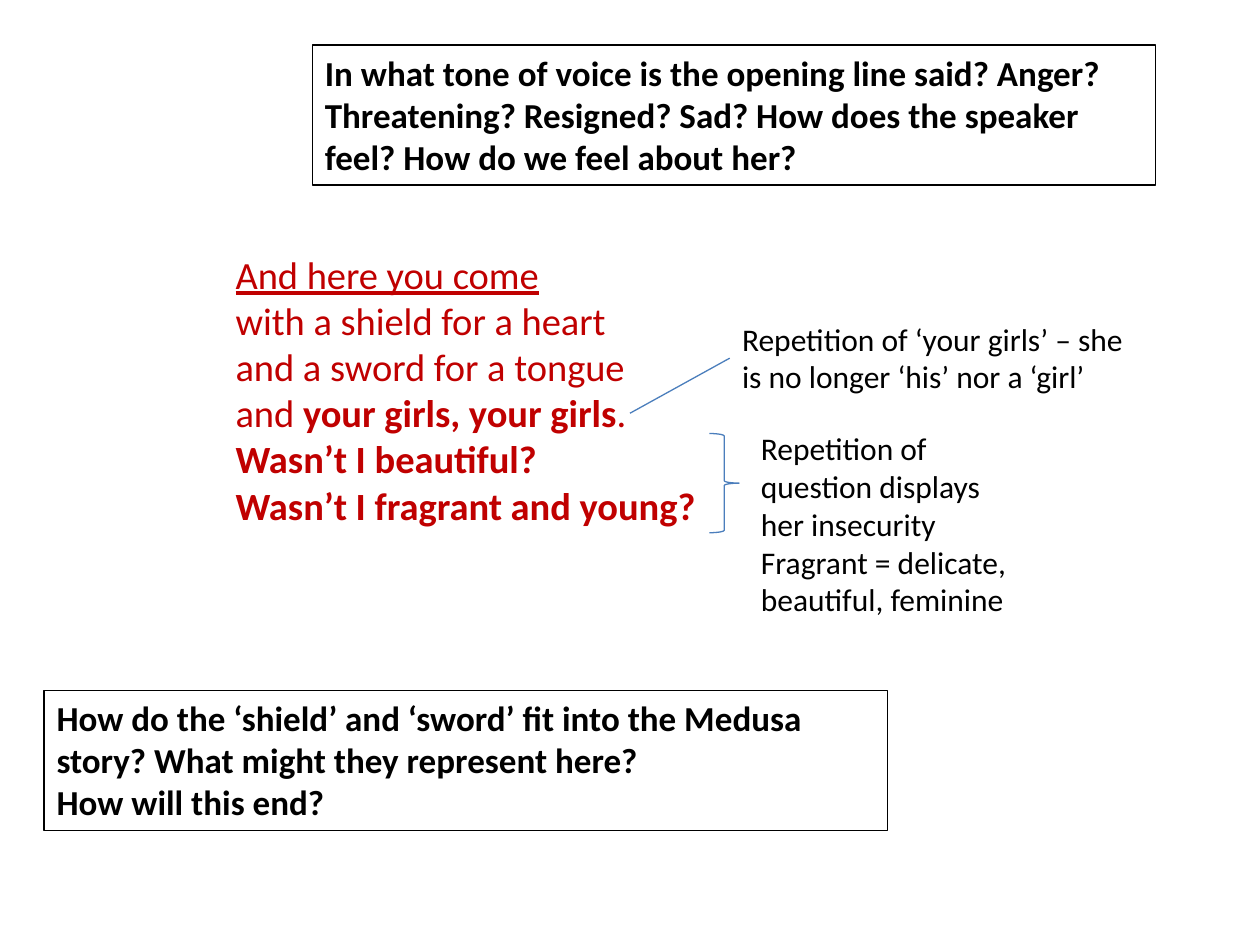
from dataclasses import dataclass

from lxml import etree
from pptx import Presentation
from pptx.dml.color import RGBColor
from pptx.enum.shapes import MSO_CONNECTOR, MSO_SHAPE
from pptx.enum.text import MSO_ANCHOR, MSO_AUTO_SIZE, PP_ALIGN
from pptx.oxml.ns import qn
from pptx.util import Cm, Pt

STRAIGHT = MSO_CONNECTOR.STRAIGHT
RIGHT_BRACE = MSO_SHAPE.RIGHT_BRACE
TOP = MSO_ANCHOR.TOP
LEFT = PP_ALIGN.LEFT
GROW = MSO_AUTO_SIZE.SHAPE_TO_FIT_TEXT
LEFT_SIDE = 1


@dataclass(frozen=True)
class Theme:
    """Colours, font, type sizes and line width."""

    font: str = "Calibri"
    ink: RGBColor = RGBColor(0x00, 0x00, 0x00)
    verse: RGBColor = RGBColor(0xC0, 0x00, 0x00)
    marker: RGBColor = RGBColor(0x4B, 0x7E, 0xBC)
    verse_size: int = 22
    question_size: int = 20
    note_size: int = 18
    line_width: float = 0.75


@dataclass(frozen=True)
class Line:
    """One line of text: plain lead, bold middle and plain tail."""

    lead: str = ""
    strong: str = ""
    tail: str = ""
    underline: bool = False


class SlideBuilder:
    """Draws the elements of an annotated poem on one slide."""

    def __init__(self, slide, theme):
        self.slide = slide
        self.theme = theme

    def text(self, left, top, width, height, lines, size, color):
        """Add a text box that holds one paragraph per line."""
        box = self.slide.shapes.add_textbox(Cm(left), Cm(top), Cm(width), Cm(height))
        frame = box.text_frame
        frame.word_wrap = True
        frame.auto_size = GROW
        frame.vertical_anchor = TOP
        for index, line in enumerate(lines):
            paragraph = frame.paragraphs[0] if index == 0 else frame.add_paragraph()
            paragraph.alignment = LEFT
            font = paragraph.font
            font.name = self.theme.font
            font.size = Pt(size)
            font.color.rgb = color
            font.underline = line.underline
            font.bold = not (line.lead or line.tail)
            for content, bold in ((line.lead, False), (line.strong, True), (line.tail, False)):
                if content:
                    run = paragraph.add_run()
                    run.text = content
                    if bold != font.bold:
                        run.font.bold = bold
        return box

    def poem(self, left, top, width, height, lines):
        """Add the stanza."""
        return self.text(left, top, width, height, lines, self.theme.verse_size, self.theme.verse)

    def note(self, left, top, width, height, *sentences):
        """Add a plain annotation."""
        lines = [Line(sentence) for sentence in sentences]
        return self.text(left, top, width, height, lines, self.theme.note_size, self.theme.ink)

    def question(self, left, top, *sentences):
        """Add a framed discussion question."""
        lines = [Line(strong=sentence) for sentence in sentences]
        box = self.text(left, top, 17, 2.82, lines, self.theme.question_size, self.theme.ink)
        self.outline(box.line, self.theme.ink)
        return box

    def brace(self, left, top, width, height):
        """Add a closing brace beside the lines it gathers."""
        shape = self.slide.shapes.add_shape(RIGHT_BRACE, Cm(left), Cm(top), Cm(width), Cm(height))
        shape.shadow.inherit = False
        shape.fill.background()
        self.outline(shape.line, self.theme.marker)

    def pointer(self, left, top, note):
        """Add a line from a point to the left side of a note."""
        middle = note.top + note.height // 2
        connector = self.slide.shapes.add_connector(STRAIGHT, Cm(left), Cm(top), note.left, middle)
        connector.end_connect(note, LEFT_SIDE)
        self.outline(connector.line, self.theme.marker)
        etree.SubElement(connector._element.spPr, qn("a:effectLst"))

    def outline(self, line, color):
        """Give a line its colour and width."""
        line.color.rgb = color
        line.width = Pt(self.theme.line_width)


def main():
    """Build the slide and save it."""
    presentation = Presentation()
    presentation.slide_width = Cm(25.4)
    presentation.slide_height = Cm(19.05)
    slide = presentation.slides.add_slide(presentation.slide_layouts[6])
    builder = SlideBuilder(slide, Theme())

    builder.poem(4.5, 4.93, 17, 5.89, [
        Line("And here you come", underline=True),
        Line("with a shield for a heart"),
        Line("and a sword for a tongue"),
        Line("and ", "your girls, your girls", "."),
        Line(strong="Wasn’t I beautiful?"),
        Line(strong="Wasn’t I fragrant and young?"),
    ])
    builder.note(
        15.09, 8.53, 6, 4.11,
        "Repetition of",
        "question displays",
        "her insecurity",
        "Fragrant = delicate, beautiful, feminine",
    )
    builder.brace(14.3, 8.74, 0.6, 2)
    builder.question(
        6.3, 0.91,
        "In what tone of voice is the opening line said? Anger? Threatening? Resigned? Sad? "
        "How does the speaker feel? How do we feel about her?",
    )
    girls_note = builder.note(
        14.71, 6.32, 8.61, 1.8,
        "Repetition of ‘your girls’ – she is no longer ‘his’ nor a ‘girl’",
    )
    builder.pointer(12.7, 8.33, girls_note)
    builder.question(
        0.89, 13.92,
        "How do the ‘shield’ and ‘sword’ fit into the Medusa story? "
        "What might they represent here?",
        "How will this end?",
    )
    presentation.save("out.pptx")


if __name__ == "__main__":
    main()
